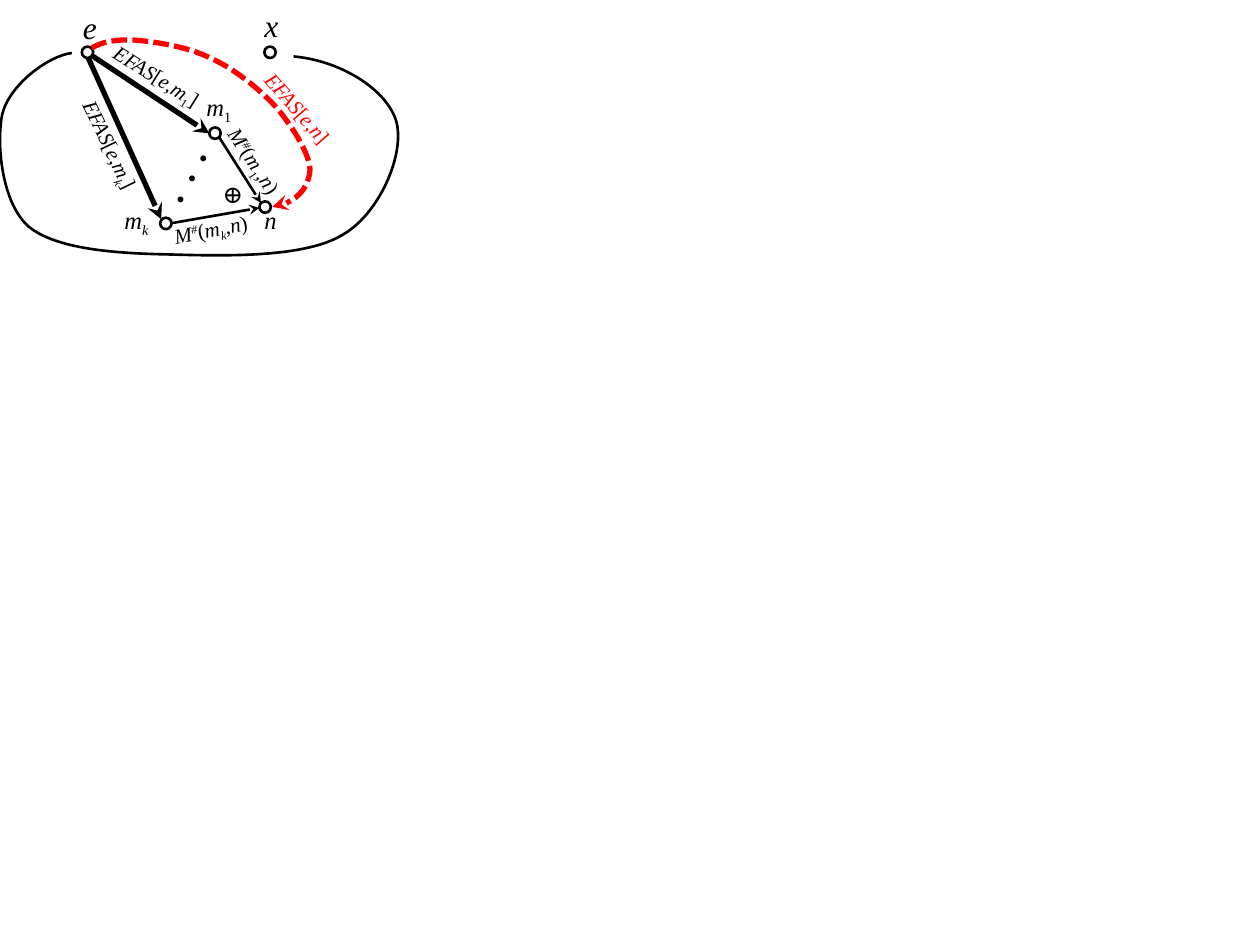
from lxml import etree
from pptx import Presentation
from pptx.dml.color import RGBColor
from pptx.enum.dml import MSO_LINE
from pptx.enum.shapes import MSO_CONNECTOR, MSO_SHAPE
from pptx.enum.text import MSO_AUTO_SIZE
from pptx.oxml.ns import qn
from pptx.util import Cm, Pt

OVAL = MSO_SHAPE.OVAL
STRAIGHT = MSO_CONNECTOR.STRAIGHT
DASH = MSO_LINE.SQUARE_DOT
GROW = MSO_AUTO_SIZE.SHAPE_TO_FIT_TEXT

COLORS = {"ink": "000000", "path": "FF0000"}
SERIF = "Times New Roman"
RING = 0.23

# Run styles: italic or upright, with "_" for subscript and "^" for superscript
STYLES = {
    "": ({"italic": False}, None),
    "i": ({"italic": True}, None),
    "_": ({"italic": False}, "-25000"),
    "_i": ({"italic": True}, "-25000"),
    "^i": ({"italic": True}, "30000"),
}

# Terms shared by the labels
M_1 = [("m", "i"), ("1", "_")]
M_K = [("m", "i"), ("k", "_i")]
EFAS = [("EFAS", "i"), ("[", ""), ("e", "i"), (",", "")]
SUM = [("M", "i"), ("#", "^i"), ("(", "")]
TO_N = [(",", ""), ("n", "i"), (")", "")]
END = [("]", "")]

# Left and top of each node ring
NODES = [(1.65, 0.94), (5.33, 0.94), (5.23, 4.06), (4.22, 2.57), (3.23, 4.39)]

# Edges: start, end, width
EDGES = [
    ((4.42, 2.77), (5.26, 4.09), 1.5),
    ((3.45, 4.5), (5.23, 4.19), 1.5),
    ((1.85, 1.12), (4.22, 2.69), 3),
    ((1.78, 1.17), (3.25, 4.42), 3),
]

# Labels: runs, box, size, turn, colour
LABELS = [
    ([("e", "i")], (1.42, 0.03, 0.71, 1.02), 18, 0, "ink"),
    ([("x", "i")], (5.08, 0, 0.71, 1.02), 18, 0, "ink"),
    ([("n", "i")], (5.08, 4.01, 0.71, 0.86), 14, 0, "ink"),
    (M_1, (3.91, 1.73, 1.32, 0.86), 14, 0, "ink"),
    (M_K, (2.26, 4.01, 1.24, 0.86), 14, 0, "ink"),
    (SUM + M_1 + TO_N, (4.04, 3.02, 2.39, 0.76), 12, 56.4, "ink"),
    (SUM + M_K + TO_N, (3.25, 4.22, 2.21, 0.76), 12, 349.5, "ink"),
    (EFAS + M_K + END, (0.86, 2.77, 2.95, 0.76), 12, 64.4, "ink"),
    (EFAS + M_1 + END, (1.93, 1.19, 2.59, 0.76), 12, 32.1, "ink"),
    (EFAS + [("n", "i")] + END, (4.88, 1.83, 2.31, 0.76), 12, 48.7, "path"),
]

# Curves: start, then two control points and an end point per segment
OUTLINE = (1.45, 1.07), [
    ((0.99, 1.12), (0.2, 1.7), (0.05, 2.29)),
    ((-0.08, 2.87), (0.03, 4.09), (0.58, 4.57)),
    ((1.14, 5.03), (2.36, 5.11), (3.4, 5.13)),
    ((4.47, 5.16), (6.17, 5.21), (6.93, 4.72)),
    ((7.7, 4.27), (8.23, 2.95), (7.95, 2.34)),
    ((7.7, 1.75), (6.83, 1.22), (5.92, 1.14)),
]
PATH = (1.85, 0.97), [
    ((2.06, 0.84), (2.34, 0.79), (2.72, 0.81)),
    ((3.12, 0.84), (3.78, 0.94), (4.24, 1.17)),
    ((4.7, 1.37), (5.21, 1.78), (5.54, 2.13)),
    ((5.87, 2.51), (6.25, 3.1), (6.25, 3.43)),
    ((6.22, 3.76), (5.92, 4.14), (5.49, 4.17)),
]


def apply(obj, values):
    for name, value in values.items():
        setattr(obj, name, value)


def lengths(values):
    return [Cm(v) for v in values]


def stroke(shape, color="ink", width=1.5, arrow=False):
    line = shape.line
    line.color.rgb = RGBColor.from_string(COLORS[color])
    line.width = Pt(width)
    if arrow:
        ln = shape._element.spPr.find(qn("a:ln"))
        etree.SubElement(ln, qn("a:tailEnd"), type="stealth")


def add_node(slide, spot):
    ring = slide.shapes.add_shape(OVAL, *lengths((*spot, RING, RING)))
    ring.shadow.inherit = False
    ring.fill.background()
    stroke(ring)


def add_edge(slide, start, end, width):
    edge = slide.shapes.add_connector(STRAIGHT, *lengths(start + end))
    stroke(edge, width=width, arrow=True)
    etree.SubElement(edge._element.spPr, qn("a:effectLst"))


def add_curve(slide, start, parts):
    build = slide.shapes.build_freeform(*lengths(start))
    build.add_line_segments([lengths(part[-1]) for part in parts], close=False)
    curve = build.convert_to_shape()
    curve.shadow.inherit = False
    curve.fill.background()
    # Turn each straight segment into a Bezier segment
    steps = list(curve._element.iter(qn("a:lnTo")))
    for step, part in zip(steps, parts):
        step.tag = qn("a:cubicBezTo")
        for i, (x, y) in enumerate(part[:2]):
            point = etree.Element(qn("a:pt"), x=str(Cm(x) - curve.left),
                                  y=str(Cm(y) - curve.top))
            step.insert(i, point)
    return curve


def add_label(slide, runs, box, size, turn=0, color="ink", font=SERIF):
    label = slide.shapes.add_textbox(*lengths(box))
    label.rotation = turn
    frame = label.text_frame
    apply(frame, {"word_wrap": True, "auto_size": GROW})
    for text, style in runs:
        run = frame.paragraphs[0].add_run()
        run.text = text
        form, base = STYLES[style]
        apply(run.font, {"name": font, "size": Pt(size), **form})
        run.font.color.rgb = RGBColor.from_string(COLORS[color])
        if base:
            run.font._element.set("baseline", base)
    return frame


def main():
    deck = Presentation()
    apply(deck, {"slide_width": Cm(25.4), "slide_height": Cm(19.05)})
    slide = deck.slides.add_slide(deck.slide_layouts[6])

    # Procedure outline
    stroke(add_curve(slide, *OUTLINE))

    # Graph
    for spot in NODES:
        add_node(slide, spot)
    for edge in EDGES:
        add_edge(slide, *edge)

    # Labels and symbols
    for label in LABELS:
        add_label(slide, *label)
    add_label(slide, [("⊕", "")], (4.24, 3.48, 1.17, 0.86), 14, font="Cambria")
    dots = add_label(slide, [(". . .", "")], (2.97, 2.84, 1.22, 1.19), 28, 299,
                     font="Calibri")
    apply(dots, {"word_wrap": False, "margin_left": 0, "margin_right": 0,
                 "margin_top": 0, "margin_bottom": 0})

    # Dashed path from e to n
    path = add_curve(slide, *PATH)
    path.line.dash_style = DASH
    stroke(path, "path", 3, arrow=True)

    deck.save("out.pptx")


if __name__ == "__main__":
    main()
